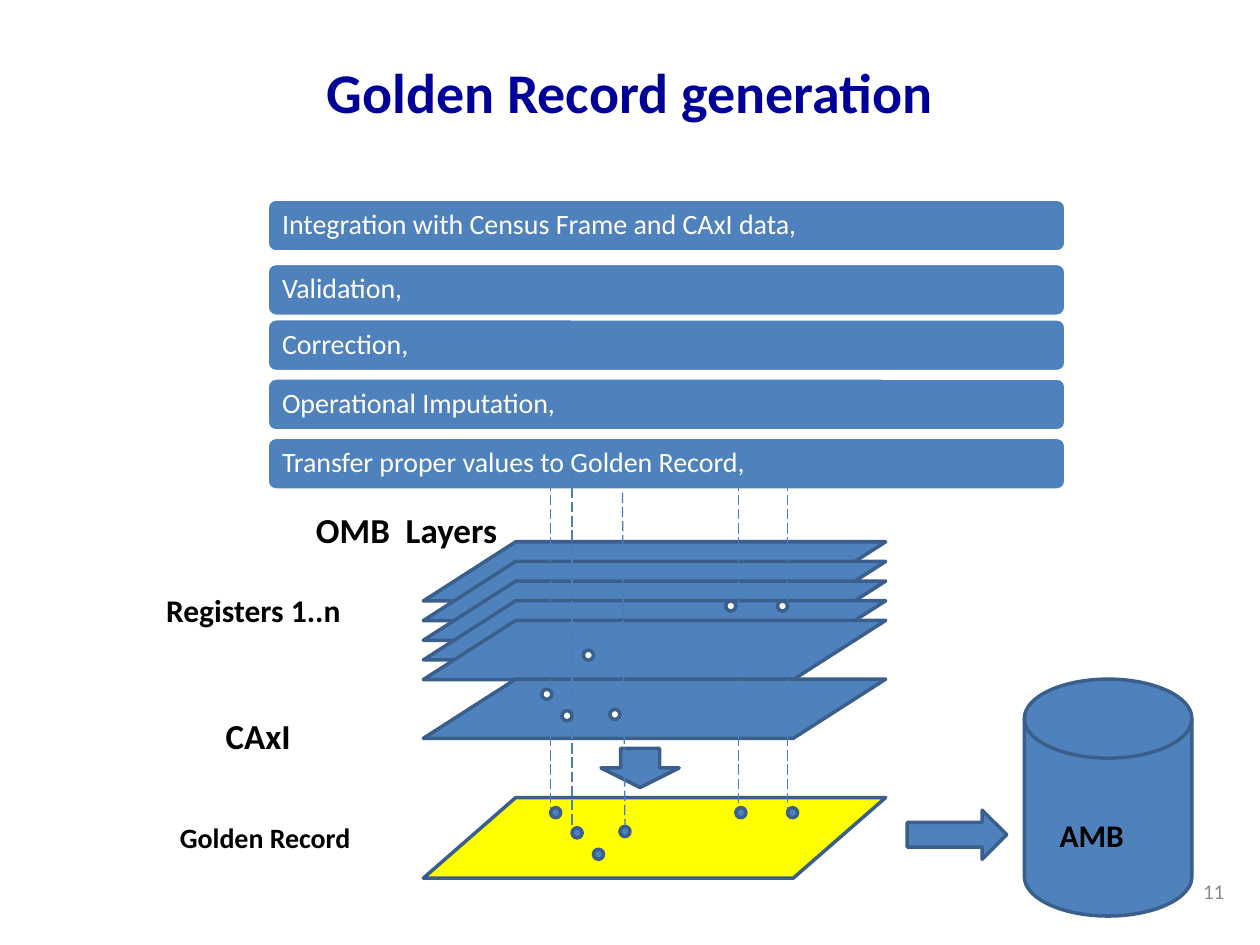
from typing import NamedTuple

from lxml.etree import SubElement
from pptx import Presentation
from pptx.dml.color import RGBColor
from pptx.enum.dml import MSO_LINE
from pptx.enum.shapes import MSO_CONNECTOR, MSO_SHAPE
from pptx.enum.text import MSO_ANCHOR, PP_ALIGN
from pptx.oxml.ns import qn
from pptx.util import Inches, Pt

FONT = "Calibri"
COLORS = {
    "blue": "4F81BD",
    "outline": "3A5F8C",
    "dash": "4B7EBC",
    "yellow": "FFFF00",
    "white": "FFFFFF",
    "black": "000000",
    "title": "000099",
    "grey": "8C8C8C",
}


class Box(NamedTuple):
    x: float
    y: float
    w: float
    h: float


class Label(NamedTuple):
    text: str
    box: Box
    size: int
    color: str = "black"
    bold: bool = True
    align: PP_ALIGN = PP_ALIGN.LEFT
    anchor: MSO_ANCHOR = MSO_ANCHOR.TOP


class Step(NamedTuple):
    text: str
    y: float


class Guide(NamedTuple):
    x1: float
    y1: float
    x2: float
    y2: float


def rgb(name: str) -> RGBColor:
    return RGBColor.from_string(COLORS[name])


def add_text(sp, label: Label) -> None:
    tf = sp.text_frame
    tf.word_wrap = True
    tf.vertical_anchor = label.anchor
    p = tf.paragraphs[0]
    p.alignment = label.align
    r = p.add_run()
    r.text = label.text
    r.font.name = FONT
    r.font.size = Pt(label.size)
    r.font.bold = label.bold
    r.font.color.rgb = rgb(label.color)


def add_label(shapes, label: Label) -> None:
    add_text(shapes.add_textbox(*map(Inches, label.box)), label)


def add_figure(shapes, kind: MSO_SHAPE, box: Box, fill: str = "blue",
               line: str = "outline"):
    sp = shapes.add_shape(kind, *map(Inches, box))
    sp.shadow.inherit = False
    sp.fill.solid()
    sp.fill.fore_color.rgb = rgb(fill)
    sp.line.color.rgb = rgb(line)
    sp.line.width = Pt(2)
    return sp


def add_step(shapes, step: Step) -> None:
    box = Box(2.12, step.y, 6.34, 0.42)
    sp = add_figure(shapes, MSO_SHAPE.ROUNDED_RECTANGLE, box, line="white")
    add_text(sp, Label(step.text, box, 16, "white", False,
                       anchor=MSO_ANCHOR.MIDDLE))
    sp.text_frame.paragraphs[0].line_spacing = 0.9


def add_layer(shapes, y: float, h: float = 0.47, fill: str = "blue") -> None:
    add_figure(shapes, MSO_SHAPE.FLOWCHART_DATA, Box(3.36, y, 3.67, h), fill)


def add_guide(shapes, guide: Guide) -> None:
    s = shapes.add_connector(MSO_CONNECTOR.STRAIGHT, *map(Inches, guide))
    s.line.color.rgb = rgb("dash")
    s.line.width = Pt(0.75)
    s.line.dash_style = MSO_LINE.LONG_DASH
    SubElement(s._element.spPr, qn("a:effectLst"))


def add_dots(shapes, points: list[tuple[float, float]], fill: str) -> None:
    for x, y in points:
        add_figure(shapes, MSO_SHAPE.OVAL, Box(x, y, 0.08, 0.08), fill)


STEPS = [
    Step("Integration with Census Frame and CAxI data,", 1.58),
    Step("Validation,", 2.09),
    Step("Correction,", 2.53),
    Step("Operational Imputation,", 3),
    Step("Transfer proper values to Golden Record,", 3.47),
]
LABELS = [
    Label("Golden Record generation", Box(0.5, 0.3, 9, 0.85), 32, "title",
          align=PP_ALIGN.CENTER, anchor=MSO_ANCHOR.MIDDLE),
    Label("11", Box(9.45, 6.87, 0.55, 0.4), 12, "grey", False,
          anchor=MSO_ANCHOR.MIDDLE),
    Label("OMB  Layers", Box(2.41, 3.99, 1.8, 0.44), 20),
    Label("Registers 1..n", Box(1.22, 4.64, 1.83, 0.4), 18),
    Label("CAxI", Box(1.15, 5.62, 1.8, 0.44), 20, align=PP_ALIGN.CENTER),
    Label("Golden Record", Box(1.33, 6.46, 1.8, 0.37), 16),
    Label("AMB", Box(8.23, 6.43, 0.87, 0.4), 18, align=PP_ALIGN.CENTER),
]
GUIDES = [
    Guide(4.37, 3.59, 4.37, 6.41),
    Guide(4.54, 3.76, 4.54, 6.57),
    Guide(4.94, 3.91, 4.96, 6.56),
    Guide(5.86, 3.59, 5.86, 6.41),
    Guide(6.25, 3.59, 6.25, 6.41),
]
GOLDEN_DOTS = [(4.37, 6.41), (4.54, 6.57), (4.71, 6.74), (4.92, 6.56),
               (6.25, 6.41), (5.84, 6.41)]
SOURCE_DOTS = [(4.3, 5.47), (4.46, 5.64), (4.63, 5.16), (4.84, 5.63),
               (6.17, 4.77), (5.76, 4.77)]
REGISTER_COUNT, REGISTER_TOP, REGISTER_STEP = 5, 4.3, 0.156


def main() -> None:
    prs = Presentation()
    prs.slide_width, prs.slide_height = Inches(10), Inches(7.5)
    shapes = prs.slides.add_slide(prs.slide_layouts[6]).shapes

    # Processing steps
    for step in STEPS:
        add_step(shapes, step)

    # Register layers, CAxI layer and golden record
    for i in range(REGISTER_COUNT):
        add_layer(shapes, REGISTER_TOP + i * REGISTER_STEP)
    add_layer(shapes, 5.39)
    add_figure(shapes, MSO_SHAPE.DOWN_ARROW, Box(4.77, 5.94, 0.62, 0.31))
    add_layer(shapes, 6.33, 0.64, "yellow")

    # Values traced down to the golden record
    for guide in GUIDES:
        add_guide(shapes, guide)
    add_dots(shapes, GOLDEN_DOTS, "blue")
    add_dots(shapes, SOURCE_DOTS, "white")

    # Target database
    add_figure(shapes, MSO_SHAPE.RIGHT_ARROW, Box(7.2, 6.43, 0.79, 0.39))
    add_figure(shapes, MSO_SHAPE.FLOWCHART_MAGNETIC_DISK,
               Box(8.13, 5.39, 1.33, 1.88))

    # Title, page number and captions
    for label in LABELS:
        add_label(shapes, label)

    prs.save("out.pptx")


if __name__ == "__main__":
    main()
